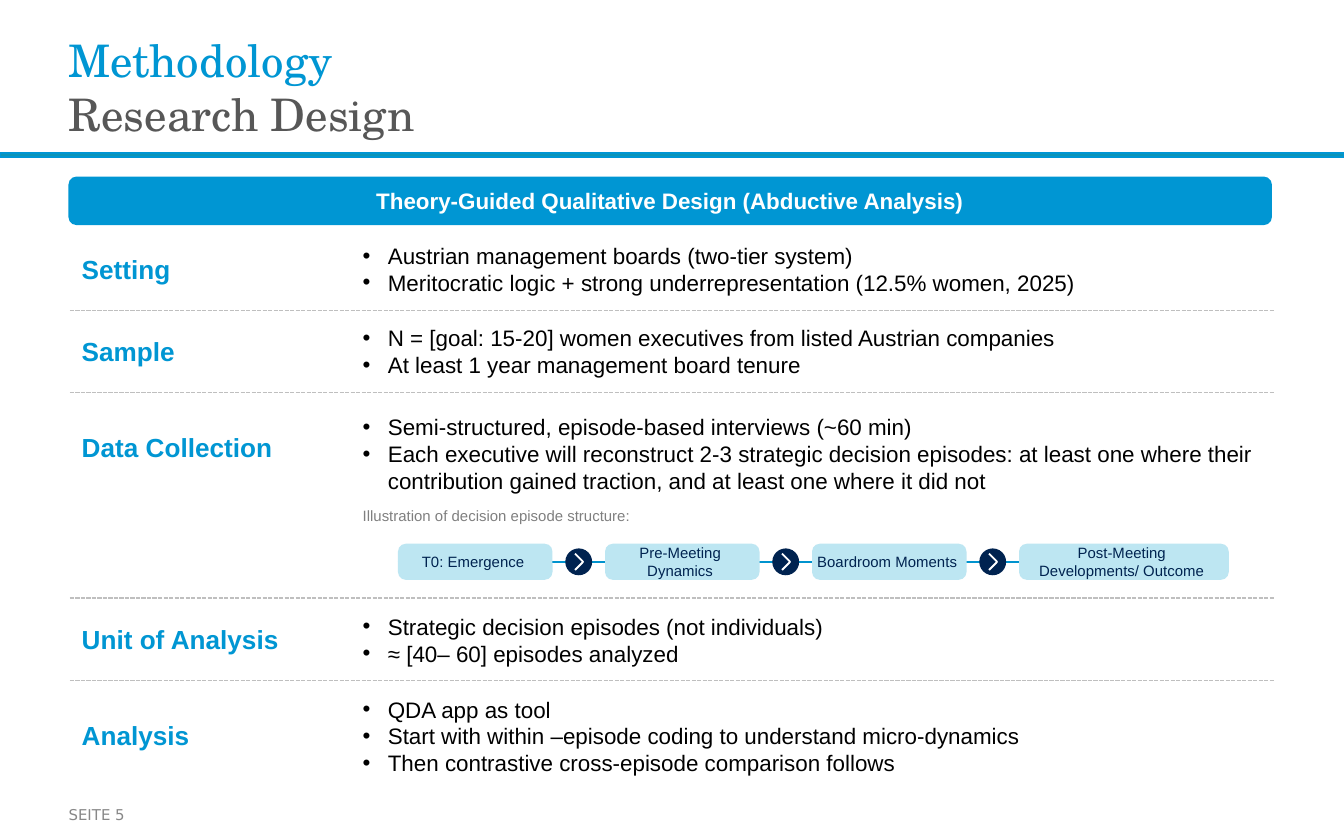
from dataclasses import dataclass

from lxml import etree
from pptx import Presentation
from pptx.dml.color import RGBColor
from pptx.enum.dml import MSO_LINE
from pptx.enum.shapes import MSO_CONNECTOR, MSO_SHAPE
from pptx.enum.text import MSO_ANCHOR, MSO_AUTO_SIZE, PP_ALIGN
from pptx.oxml.ns import qn
from pptx.util import Pt

RECT, ROUND, OVAL = MSO_SHAPE.RECTANGLE, MSO_SHAPE.ROUNDED_RECTANGLE, MSO_SHAPE.OVAL
STRAIGHT = MSO_CONNECTOR.STRAIGHT
DASH = MSO_LINE.SQUARE_DOT
LEFT, CENTER = PP_ALIGN.LEFT, PP_ALIGN.CENTER
TOP, MIDDLE = MSO_ANCHOR.TOP, MSO_ANCHOR.MIDDLE
NO_FIT = MSO_AUTO_SIZE.NONE


@dataclass(frozen=True)
class Theme:
    blue: str = "0096D3"
    bar: str = "0C94B7"
    track: str = "0093CE"
    navy: str = "002350"
    pale: str = "BDE6F2"
    white: str = "FFFFFF"
    black: str = "000000"
    slate: str = "575757"
    rule: str = "BFBFBF"
    page: str = "888888"
    note: str = "7F7F7F"
    sans: str = "Arial"
    serif: str = "TeX Gyre Schola"
    foot: str = "DejaVu Sans"
    title: float = 24
    label: float = 14
    body: float = 12
    small: float = 8


@dataclass(frozen=True)
class Row:
    name: str
    label_mid: float
    mid: float
    high: float
    wide: float
    points: tuple


@dataclass(frozen=True)
class Step:
    text: str
    wide: float


THEME = Theme()
EDGE = 36.7
ROWS = (
    Row("Setting", 144.4, 144, 36, 494, (
        "Austrian management boards (two-tier system)",
        "Meritocratic logic + strong underrepresentation (12.5% women, 2025)")),
    Row("Sample", 188.3, 188, 36, 494, (
        "N = [goal: 15-20] women executives from listed Austrian companies",
        "At least 1 year management board tenure")),
    Row("Data Collection", 239.5, 243, 51, 510.5, (
        "Semi-structured, episode-based interviews (~60 min)",
        "Each executive will reconstruct 2-3 strategic decision episodes: at least one "
        "where their contribution gained traction, and at least one where it did not")),
    Row("Unit of Analysis", 342.6, 342.7, 36, 494, (
        "Strategic decision episodes (not individuals)",
        "≈ [40– 60] episodes analyzed")),
    Row("Analysis", 393.7, 394.3, 51, 522, (
        "QDA app as tool",
        "Start with within –episode coding to understand micro-dynamics",
        "Then contrastive cross-episode comparison follows")),
)
RULES = (166.3, 210.2, 320.4, 364.4)
STEPS = (
    Step("T0: Emergence ", 82.8),
    Step("Pre-Meeting \nDynamics ", 82.8),
    Step("Boardroom Moments ", 82.8),
    Step("Post-Meeting \nDevelopments/ Outcome ", 112.4),
)
STEP_LEFT, STEP_MID, STEP_HIGH, PITCH = 213.2, 301, 19.4, 110.9
DISC = 14.4
ARROW = ((-1.6, -4.7), (-2.3, -4), (1.7, 0), (-2.3, 4), (-1.6, 4.7),
         (2.4, 0.7), (2.8, 0), (2.4, -0.7))


def tint(code: str) -> RGBColor:
    return RGBColor.from_string(code)


def mark(para) -> None:
    props = para._p.get_or_add_pPr()
    props.set("marL", str(Pt(13.5)))
    props.set("indent", str(-Pt(13.5)))
    shade = etree.SubElement(props, qn("a:buClr"))
    etree.SubElement(shade, qn("a:srgbClr"), val=THEME.black)
    etree.SubElement(props, qn("a:buFont"), typeface=THEME.sans)
    etree.SubElement(props, qn("a:buChar"), char="•")


def write(shape, *texts: str, size: float = THEME.body, colors: tuple = (THEME.black,),
          font: str = THEME.sans, bold: bool = False, align=LEFT, anchor=MIDDLE,
          inset: tuple = (7.2, 3.6), bullet: bool = False, after: float = 0) -> None:
    frame = shape.text_frame
    frame.word_wrap = True
    frame.auto_size = NO_FIT
    frame.vertical_anchor = anchor
    frame.margin_left = frame.margin_right = Pt(inset[0])
    frame.margin_top = frame.margin_bottom = Pt(inset[1])
    for spot, text in enumerate(texts):
        para = frame.add_paragraph() if spot else frame.paragraphs[0]
        para.alignment = align
        if after:
            para.space_after = Pt(after)
        if bullet:
            mark(para)
        for turn, line in enumerate(text.split("\n")):
            if turn:
                para.add_line_break()
            run = para.add_run()
            run.text = line
            run.font.name = font
            run.font.size = Pt(size)
            run.font.bold = bold
            run.font.color.rgb = tint(colors[min(turn, len(colors) - 1)])


def paint(shape, fill: str) -> None:
    shape.shadow.inherit = False
    shape.fill.solid()
    shape.fill.fore_color.rgb = tint(fill)
    shape.line.fill.background()


def block(shapes, kind, left: float, top: float, wide: float, high: float, fill: str):
    shape = shapes.add_shape(kind, Pt(left), Pt(top), Pt(wide), Pt(high))
    paint(shape, fill)
    return shape


def box(shapes, left: float, top: float, wide: float, high: float):
    return shapes.add_textbox(Pt(left), Pt(top), Pt(wide), Pt(high))


def link(shapes, left: float, right: float, y: float, color: str, dash=None):
    line = shapes.add_connector(STRAIGHT, Pt(left), Pt(y), Pt(right), Pt(y))
    line.line.color.rgb = tint(color)
    line.line.width = Pt(0.75)
    if dash:
        line.line.dash_style = dash
    etree.SubElement(line._element.spPr, qn("a:effectLst"))
    return line


def draw_row(shapes, row: Row) -> None:
    write(box(shapes, EDGE, row.label_mid - 14, 132.5, 28), row.name,
          size=THEME.label, colors=(THEME.blue,), bold=True)
    write(box(shapes, 187.2, row.mid - row.high / 2, row.wide, row.high),
          *row.points, bullet=True)


def draw_step(shapes, step: Step, left: float):
    tile = block(shapes, ROUND, left, STEP_MID - STEP_HIGH / 2, step.wide, STEP_HIGH, THEME.pale)
    tile.adjustments[0] = 0.22
    write(tile, step.text, size=THEME.small, colors=(THEME.navy,), align=CENTER,
          inset=(0, 3.6), after=6)
    return tile


def draw_arrow(shapes, x: float, y: float) -> None:
    group = shapes.add_group_shape().shapes
    block(group, OVAL, x - DISC / 2, y - DISC / 2, DISC, DISC, THEME.navy)
    dots = [(Pt(x + dx), Pt(y + dy)) for dx, dy in ARROW]
    pen = group.build_freeform(*dots[0])
    pen.add_line_segments(dots[1:], close=True)
    paint(pen.convert_to_shape(), THEME.white)


def draw_chain(shapes) -> None:
    track = link(shapes, STEP_LEFT, 615, STEP_MID, THEME.track)
    lefts = [STEP_LEFT + PITCH * spot for spot in range(len(STEPS))]
    tiles = [draw_step(shapes, step, left) for step, left in zip(STEPS, lefts)]
    track.begin_connect(tiles[0], 1)
    for step, left, after in zip(STEPS, lefts, lefts[1:]):
        draw_arrow(shapes, (left + step.wide + after) / 2, STEP_MID)


def main() -> None:
    deck = Presentation()
    deck.slide_width, deck.slide_height = Pt(720), Pt(450)
    slide = deck.slides.add_slide(deck.slide_layouts[5])
    shapes = slide.shapes

    bar = block(shapes, RECT, 0, 82.1, 720, 2.2, THEME.bar)
    bar.line.color.rgb = tint(THEME.blue)
    bar.line.width = Pt(1)

    title = shapes.title
    title.left, title.top, title.width, title.height = Pt(EDGE), Pt(10.8), Pt(564.5), Pt(71.3)
    write(title, "Methodology \nResearch Design", size=THEME.title, font=THEME.serif,
          colors=(THEME.blue, THEME.slate), inset=(0, 0))

    head = block(shapes, ROUND, EDGE, 94.6, 644.7, 26, THEME.blue)
    write(head, "Theory-Guided Qualitative Design (Abductive Analysis)",
          colors=(THEME.white,), bold=True, align=CENTER)

    for row in ROWS:
        draw_row(shapes, row)
    for y in RULES:
        link(shapes, 37.5, 682.5, y, THEME.rule, DASH)

    write(box(shapes, 187.2, 267.8, 394.6, 17.3), "Illustration of decision episode structure:",
          size=THEME.small, colors=(THEME.note,), anchor=TOP)
    draw_chain(shapes)
    write(box(shapes, EDGE, 426.2, 70.6, 20.2), "SEITE 5", size=THEME.small,
          colors=(THEME.page,), font=THEME.foot, inset=(0, 3.6))
    deck.save("out.pptx")


if __name__ == "__main__":
    main()
